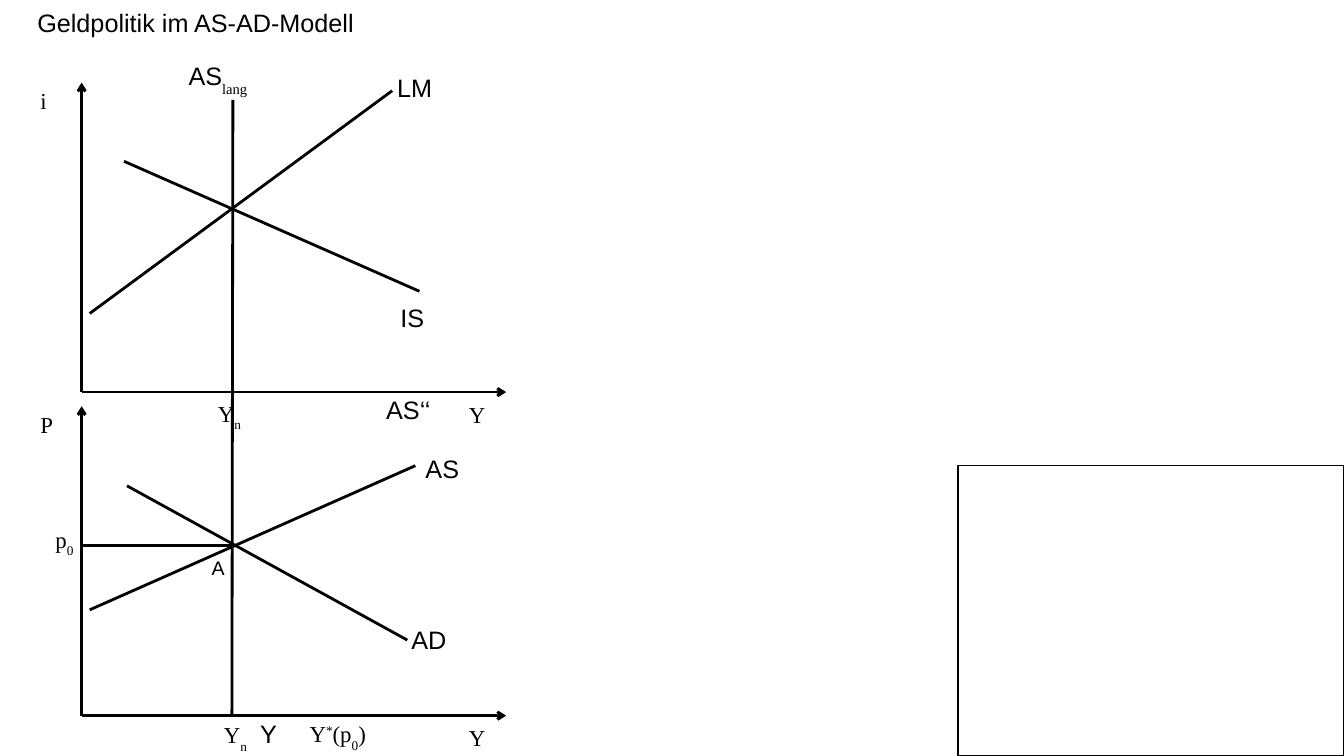
from dataclasses import dataclass

from lxml import etree
from pptx import Presentation
from pptx.dml.color import RGBColor
from pptx.enum.shapes import MSO_CONNECTOR, MSO_SHAPE
from pptx.enum.text import MSO_ANCHOR, MSO_AUTO_SIZE, PP_ALIGN
from pptx.oxml.ns import qn
from pptx.util import Inches, Pt

STRAIGHT = MSO_CONNECTOR.STRAIGHT
RECTANGLE = MSO_SHAPE.RECTANGLE
TOP = MSO_ANCHOR.TOP
LEFT = PP_ALIGN.LEFT
NO_AUTOFIT, GROW = MSO_AUTO_SIZE.NONE, MSO_AUTO_SIZE.SHAPE_TO_FIT_TEXT
SUB, SUPER = -33000, 33000


@dataclass(frozen=True)
class Theme:
    ink: RGBColor = RGBColor(0, 0, 0)
    sans: str = "Arial"
    serif: str = "Times New Roman"
    curve_size: float = 18
    axis_size: float = 16.3
    point_size: float = 14
    hairline: float = 0
    frame_line: float = 1


THEME = Theme()
CURVE = (THEME.sans, THEME.curve_size)
AXIS = (THEME.serif, THEME.axis_size)
POINT = (THEME.sans, THEME.point_size)

AXIS_X, AXIS_END, AXIS_HEIGHT = 0.81, 5.02, 3.07
PANELS = [("i", 3.89), ("P", 7.1)]  # vertical axis label, height of origin

CURVES = [
    ((1.23, 1.6), (4.16, 2.89)),   # IS
    ((0.89, 3.11), (3.89, 0.9)),   # LM
    ((1.26, 4.82), (4.04, 6.35)),  # AD
    ((0.89, 6.05), (4.12, 4.62)),  # AS
    ((2.31, 0.99), (2.3, 7.1)),    # long-run AS
    ((2.3, 5.41), (0.81, 5.41)),   # price level
]

Y_N = [("Y",), ("n", SUB)]
LABELS = [
    ((3.85, 0.68, 0.53, 0.38), [("LM",)], CURVE),
    ((3.88, 2.96, 0.42, 0.38), [("IS",)], CURVE),
    ((3.99, 6.15, 0.53, 0.38), [("AD",)], CURVE),
    ((4.13, 4.46, 0.52, 0.38), [("AS",)], CURVE),
    ((3.74, 3.87, 0.62, 0.38), [("AS‘‘",)], CURVE),
    ((2.49, 7.09, 0.4, 0.38), [("Y‘",)], CURVE),
    ((1.78, 0.56, 0.81, 0.38), [("AS",), ("lang", SUB, THEME.serif)], CURVE),
    ((2.07, 3.92, 0.42, 0.35), Y_N, AXIS),
    ((2.13, 7.11, 0.42, 0.35), Y_N, AXIS),
    ((0.46, 5.17, 0.37, 0.35), [("p",), ("0", SUB)], AXIS),
    ((2.98, 7.1, 0.77, 0.35),
     [("Y",), ("*", SUPER), ("(p",), ("0", SUB), (")",)], AXIS),
    ((2.01, 5.47, 0.31, 0.32), [("A",)], POINT),
]


def set_all(target, values):
    for name, value in values.items():
        setattr(target, name, value)


def format_frame(tf, auto_size):
    set_all(tf, {
        "word_wrap": False, "auto_size": auto_size, "vertical_anchor": TOP,
        "margin_left": Inches(0.09), "margin_right": Inches(0.09),
        "margin_top": Inches(0.04), "margin_bottom": Inches(0.04),
    })


def add_run(p, text, font, size, baseline=0):
    r = p.add_run()
    r.text = text
    set_all(r.font, {"name": font, "size": Pt(size)})
    r.font.color.rgb = THEME.ink
    if baseline:
        r.font._element.set("baseline", str(baseline))


def add_title(s, text):
    title = s.shapes.title
    set_all(title, {"left": Inches(0.28), "top": Inches(0.03),
                    "width": Inches(3.35), "height": Inches(0.38)})
    format_frame(title.text_frame, NO_AUTOFIT)
    p = title.text_frame.paragraphs[0]
    p.alignment = LEFT
    add_run(p, text, *CURVE)


def add_label(s, box, parts, style):
    """Write a label whose parts are (text, baseline, font), the last two optional."""
    sp = s.shapes.add_textbox(*map(Inches, box))
    format_frame(sp.text_frame, GROW)
    p = sp.text_frame.paragraphs[0]
    base_font, size = style
    for text, *extra in parts:
        baseline = extra[0] if extra else 0
        font = extra[1] if len(extra) > 1 else base_font
        add_run(p, text, font, size, baseline)


def add_line(s, start, end, arrow=False):
    line = s.shapes.add_connector(STRAIGHT, *map(Inches, start + end))
    line.line.color.rgb = THEME.ink
    line.line.width = Pt(THEME.hairline)
    if arrow:
        ln = line.line._get_or_add_ln()
        etree.SubElement(ln, qn("a:tailEnd")).set("type", "arrow")
    etree.SubElement(line._element.spPr, qn("a:effectLst"))


def add_axes(s, name, base):
    origin, top = (AXIS_X, base), base - AXIS_HEIGHT
    add_line(s, origin, (AXIS_X, top), arrow=True)
    add_line(s, origin, (AXIS_END, base), arrow=True)
    add_label(s, (0.31, top, 0.31, 0.35), [(name,)], AXIS)
    add_label(s, (4.56, base + 0.04, 0.35, 0.35), [("Y",)], AXIS)


def add_empty_frame(s):
    sp = s.shapes.add_shape(RECTANGLE, *map(Inches, (9.5, 4.62, 3.83, 2.88)))
    sp.shadow.inherit = False
    sp.fill.background()
    sp.line.color.rgb = THEME.ink
    sp.line.width = Pt(THEME.frame_line)


def main():
    prs = Presentation()
    set_all(prs, {"slide_width": Inches(13.33), "slide_height": Inches(7.5)})
    s = prs.slides.add_slide(prs.slide_layouts[5])
    add_title(s, "Geldpolitik im AS-AD-Modell")
    for name, base in PANELS:
        add_axes(s, name, base)
    for start, end in CURVES:
        add_line(s, start, end)
    for box, parts, style in LABELS:
        add_label(s, box, parts, style)
    add_empty_frame(s)
    prs.save("out.pptx")


if __name__ == "__main__":
    main()
